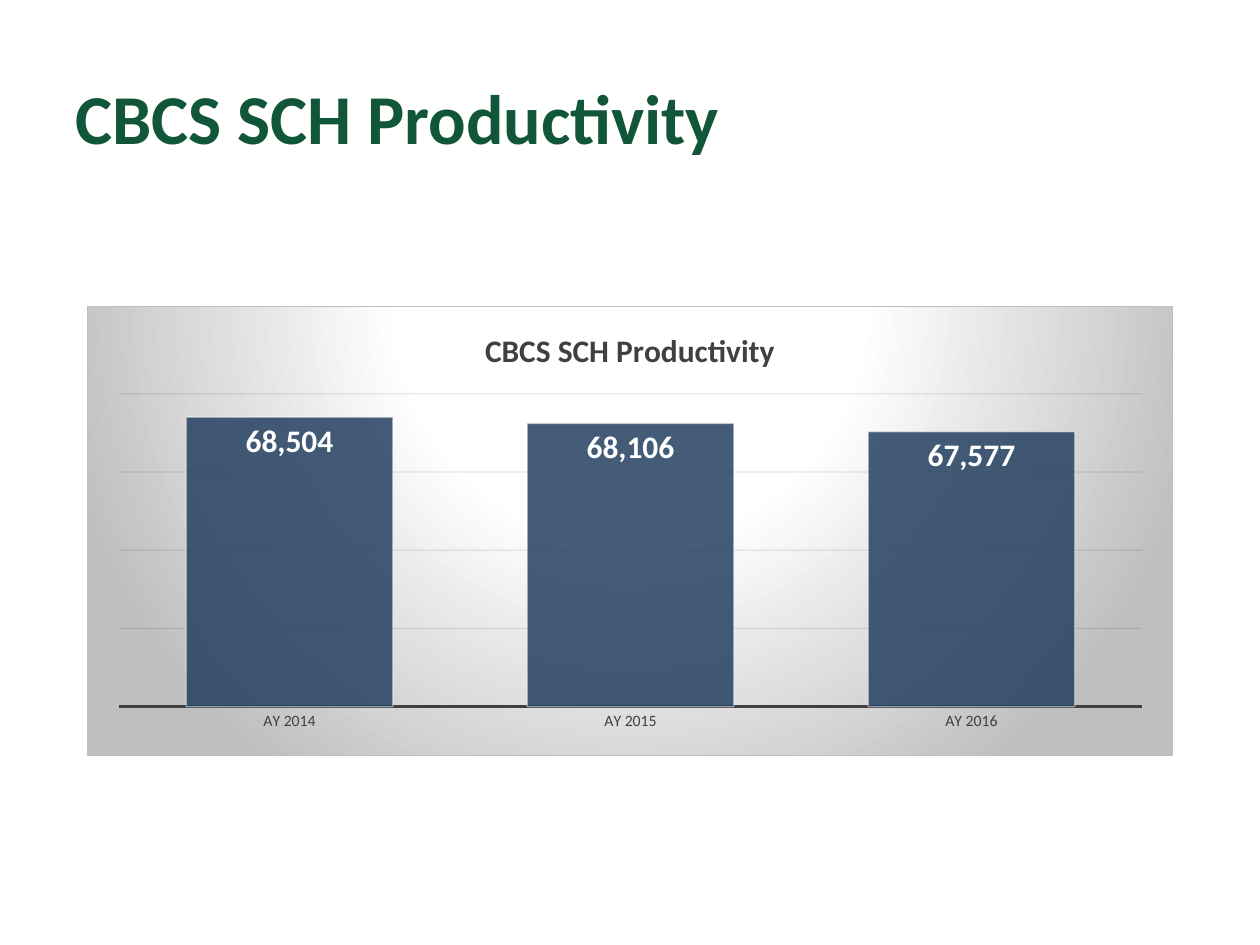
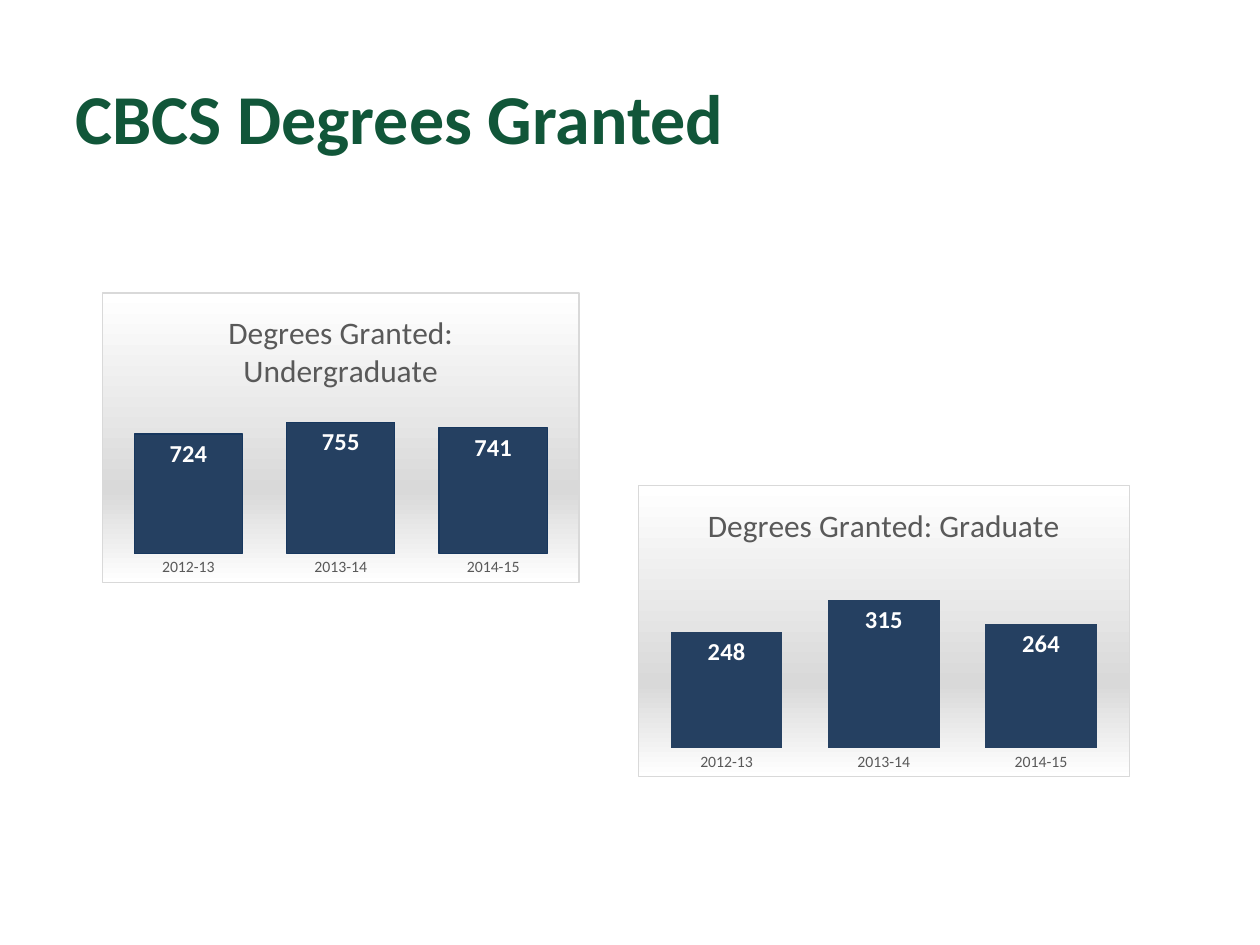
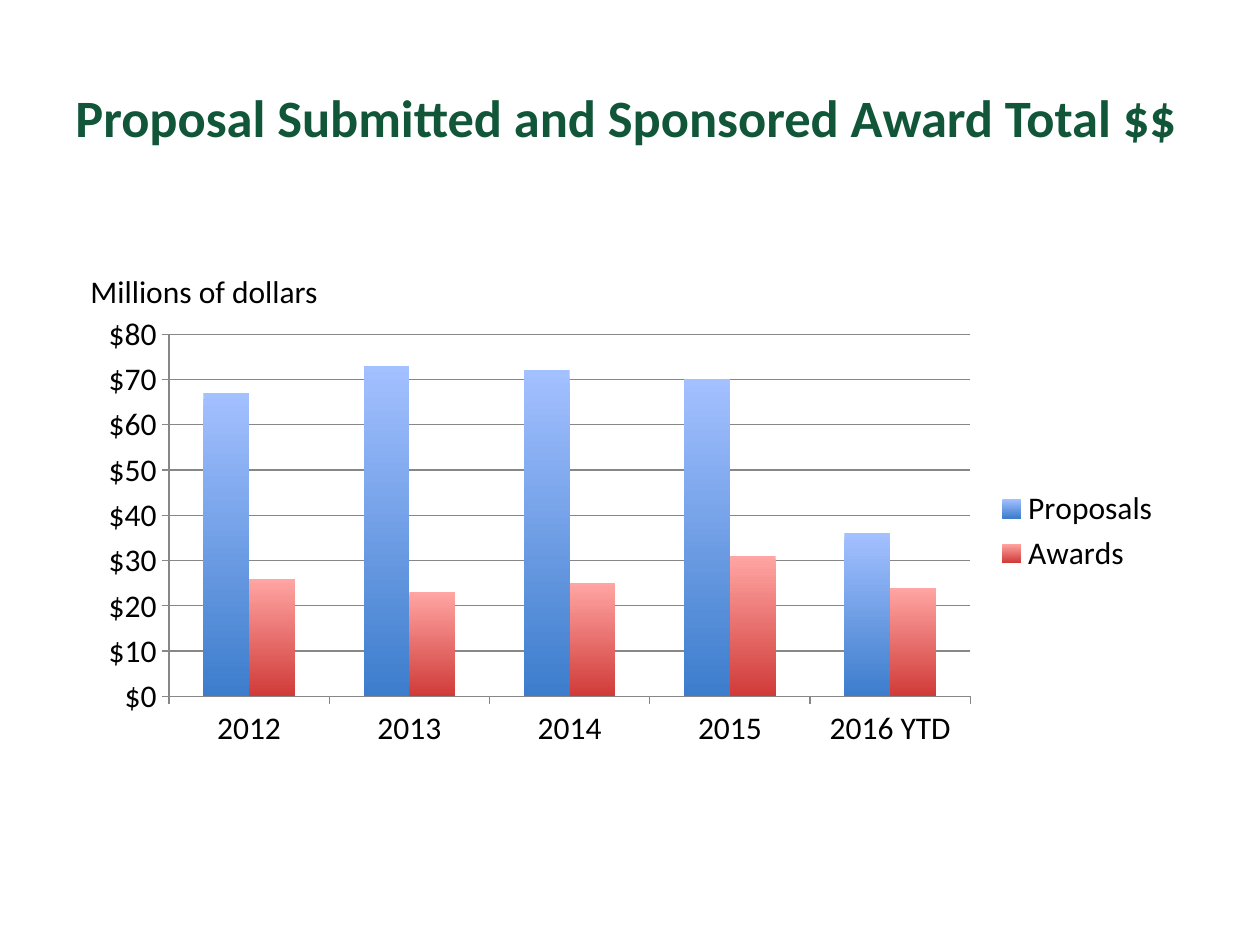
from lxml import etree
from pptx import Presentation
from pptx.chart.data import CategoryChartData
from pptx.dml.color import RGBColor
from pptx.enum.chart import XL_CHART_TYPE, XL_LABEL_POSITION, XL_LEGEND_POSITION, XL_TICK_MARK
from pptx.enum.text import MSO_ANCHOR
from pptx.oxml import parse_xml
from pptx.oxml.ns import nsdecls, qn
from pptx.util import Inches, Pt

COLUMN = XL_CHART_TYPE.COLUMN_CLUSTERED
IN_END = XL_LABEL_POSITION.INSIDE_END
RIGHT = XL_LEGEND_POSITION.RIGHT
NO_TICK = XL_TICK_MARK.NONE
MIDDLE = MSO_ANCHOR.MIDDLE
FONT = "Calibri"
HEX = {"green": "115639", "black": "000000", "white": "FFFFFF", "navy": "254061",
       "edge": "17375E", "dark": "404040", "gray": "595959", "silver": "BFBFBF",
       "pale": "D9D9D9", "ink": "0D0D0D", "rule": "878787"}
RGB = {name: RGBColor.from_string(code) for name, code in HEX.items()}
WIDE = (0.69, 2.43, 8.62, 3.57)


def write(slide, text, box, size, color, bold=False):
    frame = slide.shapes.add_textbox(*map(Inches, box)).text_frame
    frame.word_wrap = True
    frame.vertical_anchor = MIDDLE
    line = frame.paragraphs[0]
    line.text = text
    line.font.name, line.font.size, line.font.bold = FONT, Pt(size), bold
    line.font.color.rgb = RGB[color]


def plot(slide, box, cats, rows, gap, size):
    """Add a column chart with one series for each (name, values) row."""
    data = CategoryChartData()
    data.categories = cats
    for name, vals in rows:
        data.add_series(name, vals)
    chart = slide.shapes.add_chart(COLUMN, *map(Inches, box), data).chart
    chart.font.name, chart.font.size = FONT, Pt(size)
    chart.font.color.rgb = RGB["black"]
    chart.has_title = chart.has_legend = False
    chart.plots[0].gap_width = gap
    chart.plots[0].vary_by_categories = False
    return chart


deck = Presentation()
deck.slide_width, deck.slide_height = Inches(10), Inches(7.5)

# Slides and their titles
slides = []
for text, size in [("CBCS SCH Productivity", 40), ("CBCS Degrees Granted", 40),
                   ("Proposal Submitted and Sponsored Award Total $$", 30)]:
    slide = deck.slides.add_slide(deck.slide_layouts[6])
    write(slide, text, (0.5, 0.3, 9, 1.25), size, "green", True)
    slides.append(slide)
first, second, third = slides

# Charts with a value in each column, on a shaded panel
years = ["2012-13", "2013-14", "2014-15"]
sch = plot(first, WIDE, ["AY 2014", "AY 2015", "AY 2016"],
           [("Series 1", (68504, 68106, 67577))], 65, 10)
under = plot(second, (0.81, 2.32, 3.79, 2.31), years, [("Series 1", (724, 755, 741))], 41, 10)
grad = plot(second, (5.06, 3.85, 3.91, 2.32), years, [("Series 1", (248, 315, 264))], 41, 10)

round_fade = ('<a:path path="circle">'
              '<a:fillToRect l="50000" t="-80000" r="50000" b="180000"/></a:path>')
down_fade = '<a:lin ang="5400000" scaled="0"/>'
glow = [(0, "white"), (39, "white"), (100, "silver")], round_fade, "silver"
band = [(0, "white"), (68, "pale"), (100, "white")], down_fade, "pale"

for chart, title, tone, bold, label, (low, high, step), panel in [
        (sch, "CBCS SCH Productivity", "dark", True, 18, (50000, 70000, 5000), glow),
        (under, "Degrees Granted: Undergraduate", "gray", False, 14, (400, 800, 100), band),
        (grad, "Degrees Granted: Graduate", "gray", False, 14, (0, 400, 100), band)]:
    head = chart.chart_title.text_frame.paragraphs[0]
    head.text = title
    head.font.name, head.font.size, head.font.bold = FONT, Pt(18), bold
    head.font.color.rgb = RGB[tone]

    axis = chart.value_axis
    axis.minimum_scale, axis.maximum_scale, axis.major_unit = low, high, step
    axis.has_major_gridlines = axis.visible = False
    base = chart.category_axis
    base.major_tick_mark = NO_TICK
    base.tick_labels.font.size = Pt(9)
    base.tick_labels.font.color.rgb = RGB[tone]
    base.format.line.fill.background()

    bars = chart.plots[0].series[0]
    bars.format.fill.solid()
    bars.format.fill.fore_color.rgb = RGB["navy"]
    tags = bars.data_labels
    tags.show_value, tags.position = True, IN_END
    tags.number_format, tags.number_format_is_linked = "#,##0", False
    tags.font.name, tags.font.size, tags.font.bold = FONT, Pt(label), True
    tags.font.color.rgb = RGB["white"]

    stops, shade, border = panel
    marks = "".join(f'<a:gs pos="{pos * 1000}"><a:srgbClr val="{HEX[name]}"/></a:gs>'
                    for pos, name in stops)
    chart.element.find(qn("c:chart")).addnext(parse_xml(
        f'<c:spPr {nsdecls("c", "a")}><a:gradFill><a:gsLst>{marks}</a:gsLst>{shade}</a:gradFill>'
        f'<a:ln w="9525"><a:solidFill><a:srgbClr val="{HEX[border]}"/></a:solidFill></a:ln>'
        '</c:spPr>'))

# Lines of the productivity chart, see-through parts and plot area
sch.value_axis.has_major_gridlines = True
for line, color, width in [(sch.value_axis.major_gridlines.format.line, "ink", 0.75),
                           (sch.category_axis.format.line, "dark", 1.5),
                           (sch.plots[0].series[0].format.line, "white", 0.75),
                           (under.plots[0].series[0].format.line, "edge", 0.75)]:
    line.color.rgb = RGB[color]
    line.width = Pt(width)
for place, alpha in [("//c:majorGridlines//a:srgbClr", 10),
                     ("//c:ser/c:spPr/a:solidFill/a:srgbClr", 85),
                     ("//c:ser/c:spPr/a:ln//a:srgbClr", 50)]:
    for color in sch.element.xpath(place):
        etree.SubElement(color, qn("a:alpha"), val=str(alpha * 1000))

area = sch.element.xpath("//c:plotArea")[0]
for old in area.findall(qn("c:layout")):
    area.remove(old)
sides = "".join(f'<c:{key} val="{val}"/>' for key, val in [
    ("layoutTarget", "inner"), ("xMode", "edge"), ("yMode", "edge"),
    ("x", 0.029), ("y", 0.194), ("w", 0.943), ("h", 0.698)])
area.insert(0, parse_xml(
    f'<c:layout {nsdecls("c")}><c:manualLayout>{sides}</c:manualLayout></c:layout>'))

# Proposals and awards
money = plot(third, WIDE, ["2012", "2013", "2014", "2015", "2016 YTD"],
             [("Proposals", (67, 73, 72, 70, 36)), ("Awards", (26, 23, 25, 31, 24))], 150, 18)
money.has_legend = True
money.legend.position = RIGHT
money.legend.include_in_layout = False
axis = money.value_axis
axis.minimum_scale, axis.maximum_scale, axis.major_unit = 0, 80, 10
axis.tick_labels.number_format = '"$"#,##0'
axis.tick_labels.number_format_is_linked = False
for part in (axis, axis.major_gridlines, money.category_axis):
    part.format.line.color.rgb = RGB["rule"]
    part.format.line.width = Pt(0.75)
for bars, ends in zip(money.plots[0].series, [("A3C0FF", "3C7DCC"), ("FFA5A3", "D03B38")]):
    fill = bars.format.fill
    fill.gradient()
    fill.gradient_angle = 270
    for stop, code in zip(fill.gradient_stops, ends):
        stop.color.rgb = RGBColor.from_string(code)
write(third, "Millions of dollars", (0.62, 2.11, 2.27, 0.4), 18, "black")

deck.save("out.pptx")
